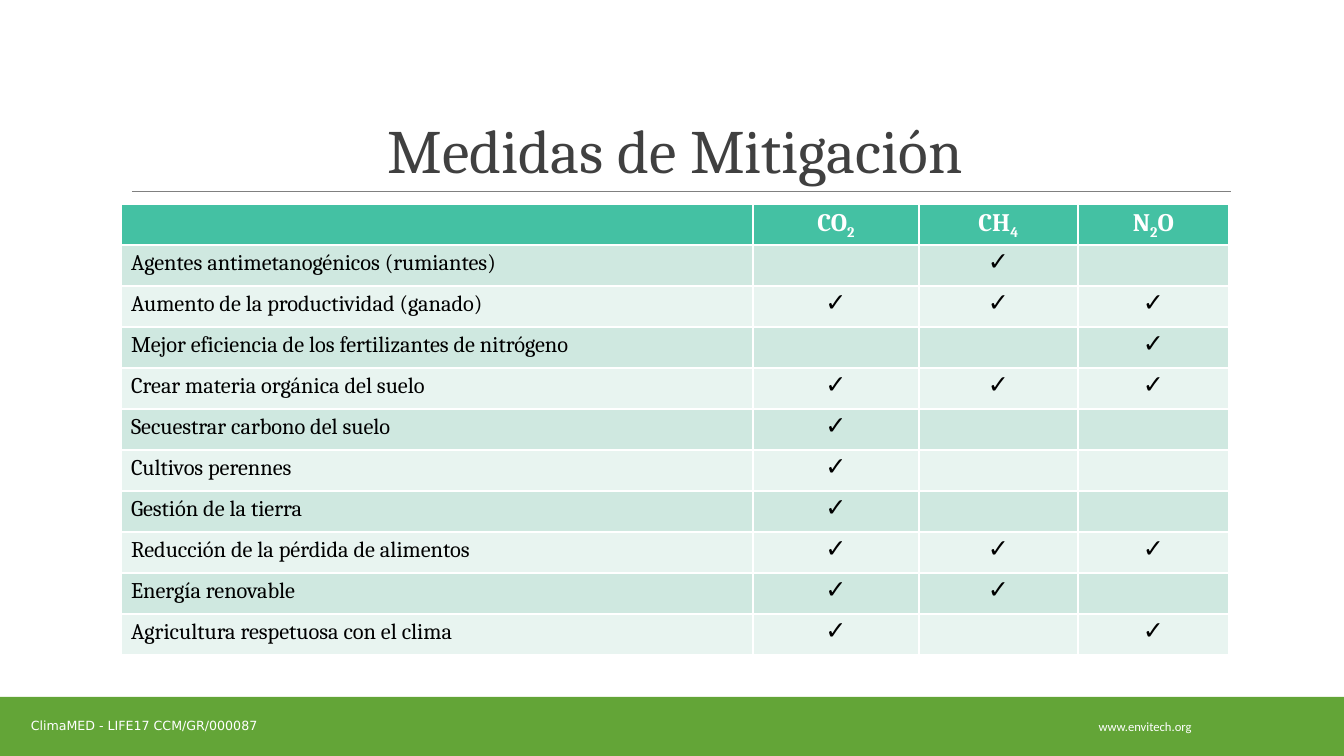
"""Builds the slide of mitigation measures by greenhouse gas."""
from dataclasses import dataclass

from lxml.etree import SubElement
from pptx import Presentation
from pptx.dml.color import RGBColor as RGB
from pptx.enum.shapes import MSO_CONNECTOR as Line, MSO_SHAPE as Shape
from pptx.enum.text import MSO_ANCHOR as Anchor, MSO_AUTO_SIZE as AutoSize, PP_ALIGN as Align
from pptx.oxml import parse_xml
from pptx.oxml.ns import nsdecls, qn
from pptx.util import Inches, Pt

PX = Inches(7.5) / 756
CHECK = "✓"
GASES = {"CO2": ("CO", "2"), "CH4": ("CH", "4"), "N2O": ("N", "2", "O")}
MEASURES = [
    ("Agentes antimetanogénicos (rumiantes)", ["CH4"]),
    ("Aumento de la productividad (ganado)", ["CO2", "CH4", "N2O"]),
    ("Mejor eficiencia de los fertilizantes de nitrógeno", ["N2O"]),
    ("Crear materia orgánica del suelo", ["CO2", "CH4", "N2O"]),
    ("Secuestrar carbono del suelo", ["CO2"]),
    ("Cultivos perennes", ["CO2"]),
    ("Gestión de la tierra", ["CO2"]),
    ("Reducción de la pérdida de alimentos", ["CO2", "CH4", "N2O"]),
    ("Energía renovable", ["CO2", "CH4"]),
    ("Agricultura respetuosa con el clima", ["CO2", "N2O"]),
]


@dataclass(frozen=True)
class Theme:
    """Colours, fonts and type sizes."""
    white: str = "FFFFFF"
    black: str = "000000"
    title: str = "404040"
    rule: str = "808080"
    footer: str = "63A537"
    header: str = "44C1A3"
    bands: tuple = ("CFE8E0", "E8F4F0")
    serif: str = "Cambria"
    title_size: int = 44
    head_size: int = 18
    body_size: int = 16
    small_size: int = 9
    border: float = 0.96


def px(*values):
    """Turns whole pixels into EMU."""
    return [round(v * PX) for v in values]


class Deck:
    """Holds the theme and the current slide."""

    def __init__(self, theme):
        """Starts a presentation with one title-only slide."""
        self.t = theme
        self.prs = Presentation()
        self.prs.slide_width, self.prs.slide_height = px(1344, 756)
        self.s = self.prs.slides.add_slide(self.prs.slide_layouts[5])

    def text(self, tf, runs, font, size, color, bold=False, align=Align.CENTER, spacing=1.0):
        """Sets one paragraph, with digits of a formula lowered."""
        p = tf.paragraphs[0]
        for name, value in {"alignment": align, "line_spacing": spacing}.items():
            setattr(p, name, value)
        for content in runs:
            r = p.add_run()
            r.text = content
            style = {"name": font, "size": Pt(size), "bold": bold}
            for name, value in style.items():
                setattr(r.font, name, value)
            r.font.color.rgb = RGB.from_string(color)
            if content.isdigit():
                r._r.get_or_add_rPr().set("baseline", "-25000")

    def place(self, shape, box):
        """Moves a shape to its box."""
        for name, value in zip(("left", "top", "width", "height"), px(*box)):
            setattr(shape, name, value)

    def frame(self, tf, anchor):
        """Sets wrapping and anchoring of a text frame."""
        style = {"word_wrap": True, "auto_size": AutoSize.NONE, "vertical_anchor": anchor}
        for name, value in style.items():
            setattr(tf, name, value)

    def title(self, content, box):
        """Fills the title placeholder."""
        sp = self.s.shapes.title
        self.place(sp, box)
        self.frame(sp.text_frame, Anchor.BOTTOM)
        self.text(sp.text_frame, [content], self.t.serif, self.t.title_size, self.t.title,
                  spacing=0.85)

    def bar(self, box, color):
        """Adds a plain filled rectangle."""
        sp = self.s.shapes.add_shape(Shape.RECTANGLE, *px(*box))
        sp.shadow.inherit = False
        sp.fill.solid()
        sp.fill.fore_color.rgb = RGB.from_string(color)
        sp.line.fill.background()

    def rule(self, ends, color, width):
        """Adds a straight line."""
        line = self.s.shapes.add_connector(Line.STRAIGHT, *px(*ends))
        line.line.color.rgb = RGB.from_string(color)
        line.line.width = Pt(width)
        SubElement(line._element.spPr, qn("a:effectLst"))

    def label(self, content, box, font):
        """Adds a small footer text."""
        tf = self.s.shapes.add_textbox(*px(*box)).text_frame
        self.frame(tf, Anchor.MIDDLE)
        self.text(tf, [content], font, self.t.small_size, self.t.white)

    def cell(self, cell, color):
        """Sets the fill, margins and borders of a cell."""
        cell.margin_top, cell.margin_bottom = px(5, 0)
        cell.fill.solid()
        cell.fill.fore_color.rgb = RGB.from_string(color)
        for i, side in enumerate("LRTB"):
            border = parse_xml(
                f'<a:ln{side} {nsdecls("a")} w="{Pt(self.t.border)}"><a:solidFill>'
                f'<a:srgbClr val="{self.t.white}"/></a:solidFill></a:ln{side}>')
            cell._tc.get_or_add_tcPr().insert(i, border)

    def table(self, origin, widths, row_height):
        """Adds the grid of measures against gases."""
        t = self.t
        rows = len(MEASURES) + 1
        box = px(*origin, sum(widths), row_height * rows)
        grid = self.s.shapes.add_table(rows, len(widths), *box).table
        grid.horz_banding = False
        for col, width in zip(grid.columns, px(*widths)):
            col.width = width
        for i, row in enumerate(grid.rows):
            row.height = px(row_height)[0]
            for cell in row.cells:
                self.cell(cell, t.bands[(i - 1) % 2] if i else t.header)
        for j, formula in enumerate(GASES.values(), 1):
            self.text(grid.cell(0, j).text_frame, formula, t.serif, t.head_size, t.white,
                      bold=True, spacing=0.98)
        for i, (measure, gases) in enumerate(MEASURES, 1):
            self.text(grid.cell(i, 0).text_frame, [measure], t.serif, t.body_size, t.black,
                      align=Align.LEFT, spacing=0.98)
            for j, gas in enumerate(GASES, 1):
                if gas in gases:
                    self.text(grid.cell(i, j).text_frame, [CHECK], "Arial", t.head_size, t.black,
                              spacing=0.93)


def main():
    """Builds and saves the slide."""
    theme = Theme()
    deck = Deck(theme)
    deck.rule((132, 191, 1231, 191), theme.rule, 0.5)
    deck.bar((0, 697, 1344, 59), theme.footer)
    deck.label("www.envitech.org", (1021, 707, 248, 40), "Calibri")
    deck.label("ClimaMED - LIFE17 CCM/GR/000087", (-16, 706, 320, 40), "DejaVu Sans")
    deck.title("Medidas de Mitigación", (121, 31, 1109, 160))
    deck.table((121, 204), (632, 166, 159, 151), 41)
    deck.prs.save("out.pptx")


if __name__ == "__main__":
    main()
